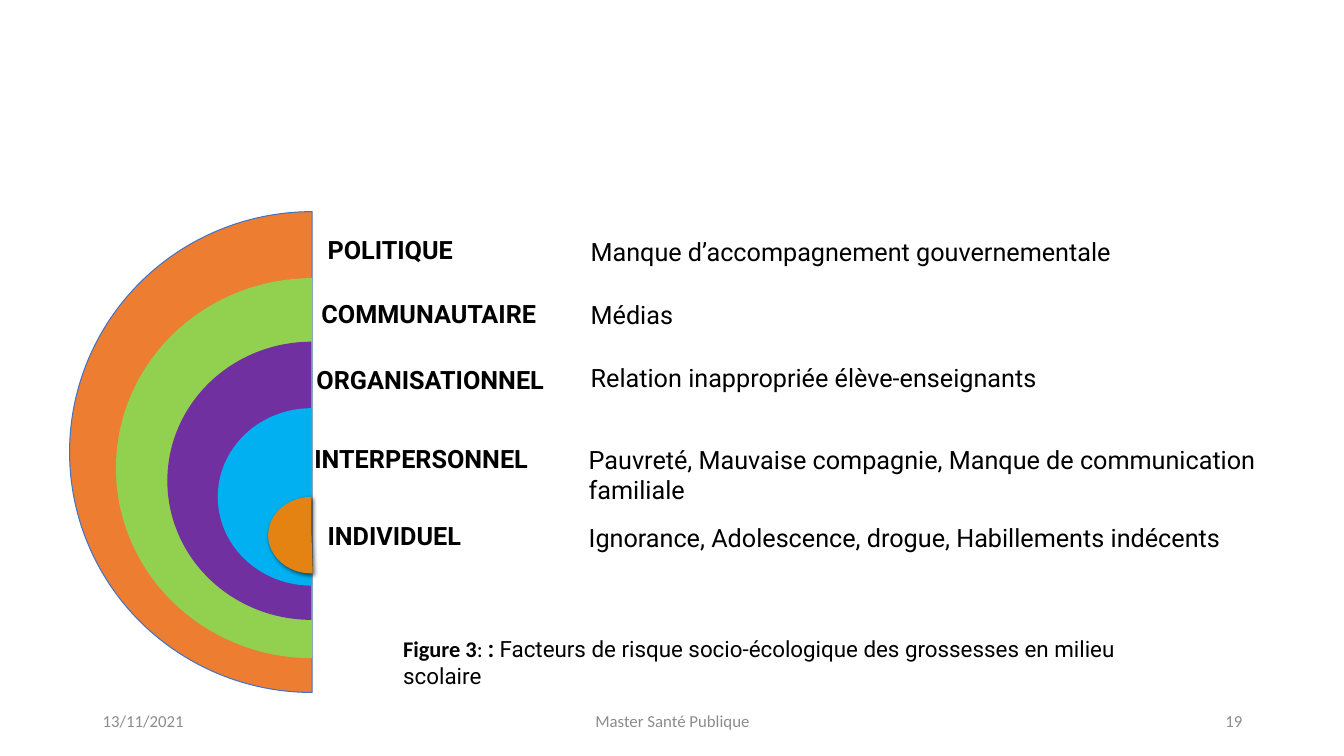
from lxml import etree
from pptx import Presentation
from pptx.dml.color import RGBColor
from pptx.enum.shapes import MSO_SHAPE
from pptx.enum.text import MSO_ANCHOR, MSO_AUTO_SIZE, PP_ALIGN
from pptx.oxml.ns import qn
from pptx.util import Inches, Pt

BLACK = RGBColor(0x00, 0x00, 0x00)
GREY = RGBColor(0x8C, 0x8C, 0x8C)
ORANGE = RGBColor(0xED, 0x7D, 0x31)
GREEN = RGBColor(0x92, 0xD0, 0x50)
PURPLE = RGBColor(0x70, 0x30, 0xA0)
CYAN = RGBColor(0x00, 0xB0, 0xF0)
AMBER = RGBColor(0xE4, 0x83, 0x12)
BLUE = RGBColor(0x44, 0x72, 0xC4)

# left, top, width, height, start angle, fill
HALF_DISCS = [
    (0.69, 2.1, 4.81, 4.77, 54, ORANGE),
    (1.15, 2.76, 3.89, 3.77, 54, GREEN),
    (1.66, 3.39, 2.86, 2.76, 54, PURPLE),
    (2.16, 4.05, 1.86, 1.76, 54, CYAN),
    (2.66, 4.93, 0.86, 0.76, 52.89, AMBER),
]

# level, left, top, width; then its factors, left, top, width, height
LEVELS = [
    ("POLITIQUE", 3.15, 2.28, 3.89,
     "Manque d’accompagnement gouvernementale", 5.76, 2.3, 7.17, 0.4),
    ("COMMUNAUTAIRE", 3.09, 2.91, 4.13,
     "Médias", 5.76, 2.92, 4.61, 0.4),
    ("ORGANISATIONNEL", 3.04, 3.57, 4.51,
     "Relation inappropriée élève-enseignants", 5.76, 3.55, 5.45, 0.4),
    ("INTERPERSONNEL", 3.02, 4.35, 4.23,
     "Pauvreté, Mauvaise compagnie, Manque de communication familiale",
     5.74, 4.36, 7.12, 0.71),
    ("INDIVIDUEL", 3.15, 5.11, 9.12,
     "Ignorance, Adolescence, drogue, Habillements indécents",
     5.74, 5.13, 6.78, 0.4),
]

FOOTER = [
    ("13/11/2021", 0.92, 3, PP_ALIGN.LEFT),
    ("Master Santé Publique", 4.42, 4.5, PP_ALIGN.CENTER),
    ("19", 9.42, 3, PP_ALIGN.RIGHT),
]

CAPTION = [
    ("Figure 3", "Calibri", True),
    (": ", "Calibri", False),
    (": ", "Roboto", True),
    ("Facteurs de risque socio-écologique des grossesses en milieu scolaire",
     "Roboto", False),
]


class SlideBuilder:
    def __init__(self, s):
        self.s = s

    def half_disc(self, left, top, width, height, start, color):
        sp = self.s.shapes.add_shape(MSO_SHAPE.PIE, Inches(left), Inches(top),
                                     Inches(width), Inches(height))
        sp.adjustments[0], sp.adjustments[1] = start, 162
        sp.shadow.inherit = False
        sp.fill.solid()
        sp.fill.fore_color.rgb = color
        sp.line.fill.background()
        return sp

    def outline(self, sp, color, width):
        sp.line.color.rgb = color
        sp.line.width = Pt(width)

    def drop_shadow(self, sp):
        effects = sp.element.spPr.find(qn("a:effectLst"))
        shadow = etree.SubElement(effects, qn("a:outerShdw"), blurRad=str(Pt(3)),
                                  dist=str(Pt(2)), dir="2700000", rotWithShape="0")
        color = etree.SubElement(shadow, qn("a:srgbClr"), val="000000")
        etree.SubElement(color, qn("a:alpha"), val="60000")

    def text(self, runs, left, top, width, height=0.4, size=18, color=BLACK,
             align=PP_ALIGN.LEFT, anchor=MSO_ANCHOR.TOP, grow=True):
        """Add a text box; runs is a list of (text, font, bold)."""
        sp = self.s.shapes.add_textbox(Inches(left), Inches(top),
                                       Inches(width), Inches(height))
        tf = sp.text_frame
        tf.word_wrap = True
        tf.auto_size = MSO_AUTO_SIZE.SHAPE_TO_FIT_TEXT if grow else MSO_AUTO_SIZE.NONE
        tf.vertical_anchor = anchor
        p = tf.paragraphs[0]
        p.alignment = align
        for text, font, bold in runs:
            r = p.add_run()
            r.text = text
            r.font.name, r.font.size, r.font.bold = font, Pt(size), bold
            r.font.color.rgb = color


def main():
    prs = Presentation()
    prs.slide_width, prs.slide_height = Inches(13.33), Inches(7.5)
    builder = SlideBuilder(prs.slides.add_slide(prs.slide_layouts[6]))

    discs = [builder.half_disc(*disc) for disc in HALF_DISCS]
    builder.outline(discs[0], BLUE, 0.75)
    builder.drop_shadow(discs[-1])

    for level, left, top, width, factors, *box in LEVELS:
        builder.text([(level, "Roboto", True)], left, top, width)
        builder.text([(factors, "Roboto", False)], *box)

    builder.text(CAPTION, 3.9, 6.25, 7.91, 0.64, size=16)
    for text, left, width, align in FOOTER:
        builder.text([(text, "Calibri", False)], left, 6.95, width, size=12,
                     color=GREY, align=align, anchor=MSO_ANCHOR.MIDDLE, grow=False)

    prs.save("out.pptx")


if __name__ == "__main__":
    main()
